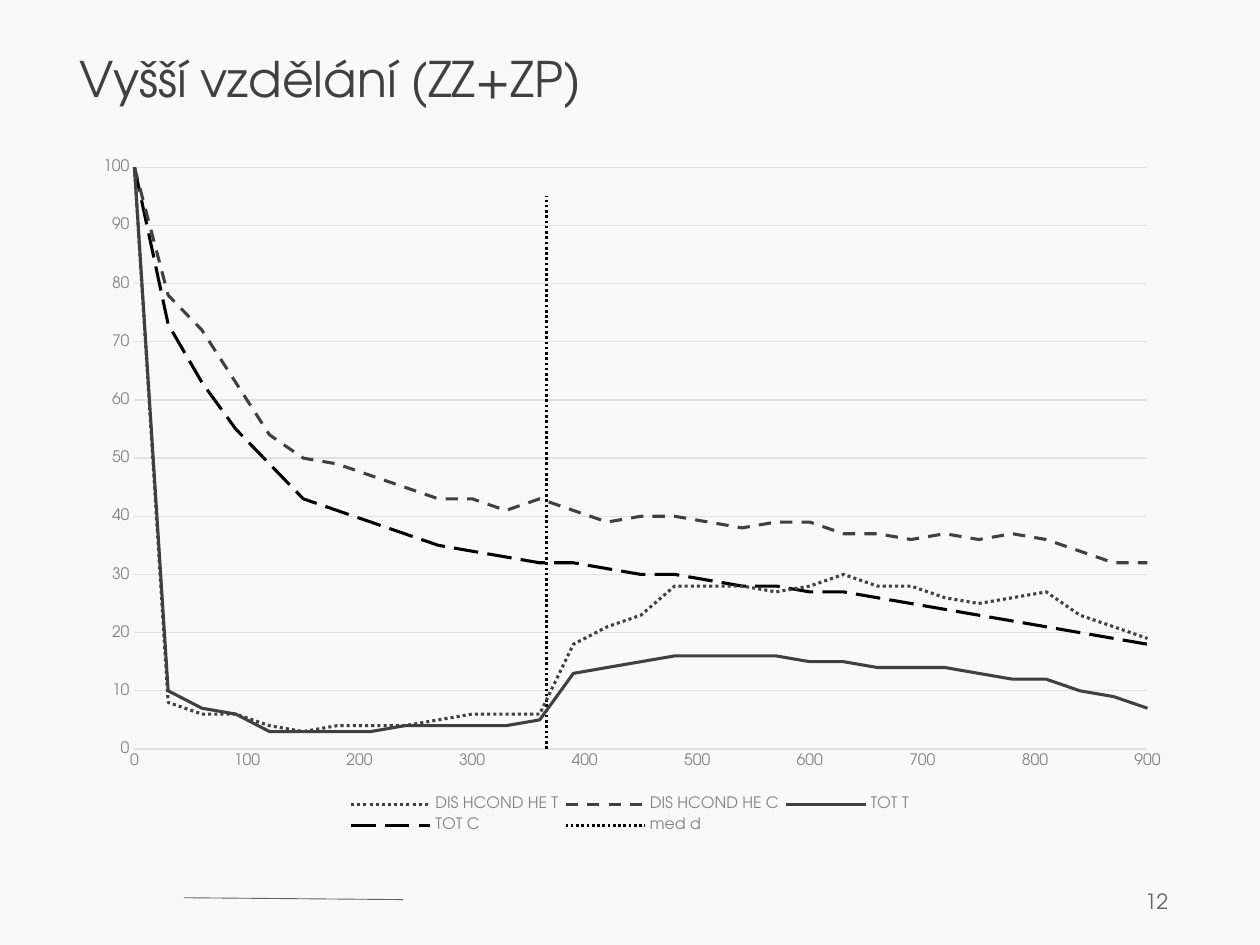
from dataclasses import dataclass
from lxml import etree
from pptx import Presentation
from pptx.chart.data import XyChartData
from pptx.dml.color import RGBColor
from pptx.enum.chart import XL_CHART_TYPE, XL_LEGEND_POSITION, XL_TICK_MARK
from pptx.enum.dml import MSO_LINE
from pptx.enum.shapes import MSO_CONNECTOR
from pptx.enum.text import MSO_ANCHOR, PP_ALIGN
from pptx.oxml.ns import qn
from pptx.util import Inches, Pt

SCATTER = XL_CHART_TYPE.XY_SCATTER_LINES_NO_MARKERS
BOTTOM = XL_LEGEND_POSITION.BOTTOM
NO_TICK = XL_TICK_MARK.NONE
DOT, DASH = MSO_LINE.ROUND_DOT, MSO_LINE.DASH
LONG, SOLID = MSO_LINE.LONG_DASH, MSO_LINE.SOLID
TOP, MIDDLE = MSO_ANCHOR.TOP, MSO_ANCHOR.MIDDLE
LEFT, RIGHT = PP_ALIGN.LEFT, PP_ALIGN.RIGHT
TITLE_ONLY = 5


@dataclass(frozen=True)
class Theme:
    face: str = "TeX Gyre Adventor"
    back: str = "F9F9F9"
    ink: str = "404040"
    black: str = "000000"
    foot: str = "636363"
    label: str = "838383"
    grid: str = "E2E2E2"
    title: int = 28
    number: int = 12
    chart: int = 10
    axis: int = 9


THEME = Theme()
DAYS = range(0, 901, 30)
CURVES = [
    ("DIS HCOND HE T", THEME.ink, 1.75, DOT, DAYS,
     [100, 8, 6, 6, 4, 3, 4, 4, 4, 5, 6, 6, 6, 18, 21, 23, 28, 28, 28, 27,
      28, 30, 28, 28, 26, 25, 26, 27, 23, 21, 19]),
    ("DIS HCOND HE C", THEME.ink, 1.75, DASH, DAYS,
     [100, 78, 72, 63, 54, 50, 49, 47, 45, 43, 43, 41, 43, 41, 39, 40, 40,
      39, 38, 39, 39, 37, 37, 36, 37, 36, 37, 36, 34, 32, 32]),
    ("TOT T", THEME.ink, 1.75, SOLID, DAYS,
     [100, 10, 7, 6, 3, 3, 3, 3, 4, 4, 4, 4, 5, 13, 14, 15, 16, 16, 16, 16,
      15, 15, 14, 14, 14, 13, 12, 12, 10, 9, 7]),
    ("TOT C", THEME.black, 1.75, LONG, DAYS,
     [100, 73, 63, 55, 49, 43, 41, 39, 37, 35, 34, 33, 32, 32, 31, 30, 30,
      29, 28, 28, 27, 27, 26, 25, 24, 23, 22, 21, 20, 19, 18]),
    ("med d", THEME.black, 1.5, DOT, [366, 366], [0, 95]),
]


class Deck:
    def __init__(self, theme):
        self.theme = theme
        self.show = Presentation()
        self.show.slide_width, self.show.slide_height = Inches(10), Inches(7.5)
        self.slide = self.show.slides.add_slide(
            self.show.slide_layouts[TITLE_ONLY])
        fill = self.slide.background.fill
        fill.solid()
        fill.fore_color.rgb = RGBColor.from_string(theme.back)

    def scale(self, *shares):
        sides = self.show.slide_width, self.show.slide_height
        return [round(s * sides[i % 2] / 100) for i, s in enumerate(shares)]

    def font(self, font, size, color):
        font.name, font.size = self.theme.face, Pt(size)
        font.color.rgb = RGBColor.from_string(color)

    def stroke(self, line, color, width, dash=SOLID):
        line.color.rgb = RGBColor.from_string(color)
        line.width, line.dash_style = Pt(width), dash

    def label(self, shape, text, size, color, align, anchor):
        frame = shape.text_frame
        frame.word_wrap, frame.vertical_anchor = True, anchor
        para = frame.paragraphs[0]
        para.text, para.alignment = text, align
        self.font(para.font, size, color)
        return frame

    def title(self, text, *box):
        shape = self.slide.shapes.title
        shape.left, shape.top, shape.width, shape.height = self.scale(*box)
        frame = self.label(shape, text, self.theme.title, self.theme.ink,
                           LEFT, TOP)
        frame.margin_left = frame.margin_right = 0
        frame.margin_top = frame.margin_bottom = 0
        frame.paragraphs[0].line_spacing = 0.8

    def number(self, text, *box):
        shape = self.slide.shapes.add_textbox(*self.scale(*box))
        self.label(shape, text, self.theme.number, self.theme.foot,
                   RIGHT, MIDDLE)

    def rule(self, *ends):
        line = self.slide.shapes.add_connector(
            MSO_CONNECTOR.STRAIGHT, *self.scale(*ends))
        self.stroke(line.line, self.theme.foot, 0.5)
        etree.SubElement(line._element.spPr, qn("a:effectLst"))

    def place(self, part, index, inner, *box):
        for old in part.findall(qn("c:layout")):
            part.remove(old)
        layout = etree.Element(qn("c:layout"))
        manual = etree.SubElement(layout, qn("c:manualLayout"))
        pairs = [("layoutTarget", "inner")] if inner else []
        pairs += [("xMode", "edge"), ("yMode", "edge"), *zip("xywh", box)]
        for tag, val in pairs:
            etree.SubElement(manual, qn("c:" + tag), val=str(val))
        part.insert(index, layout)

    def axis(self, axis, top, step):
        axis.minimum_scale, axis.maximum_scale = 0, top
        axis.major_unit = step
        axis.major_tick_mark = axis.minor_tick_mark = NO_TICK
        axis.has_major_gridlines = False
        axis.tick_labels.number_format = "0"
        axis.tick_labels.number_format_is_linked = False
        self.font(axis.tick_labels.font, self.theme.axis, self.theme.label)

    def chart(self, curves, *box):
        theme, data = self.theme, XyChartData()
        for name, _, _, _, days, shares in curves:
            series = data.add_series(name)
            for point in zip(days, shares):
                series.add_data_point(*point)
        chart = self.slide.shapes.add_chart(
            SCATTER, *self.scale(*box), data).chart
        self.font(chart.font, theme.chart, theme.ink)
        chart.has_title = False
        plot = chart.plots[0]
        plot.vary_by_categories = False
        for series, (_, color, width, dash, _, _) in zip(plot.series, curves):
            series.smooth = False
            self.stroke(series.format.line, color, width, dash)
        across, up = chart.category_axis, chart.value_axis
        self.axis(across, 900, 100)
        self.axis(up, 100, 10)
        self.stroke(across.format.line, theme.grid, 0.75)
        up.format.line.fill.background()
        up.has_major_gridlines = True
        self.stroke(up.major_gridlines.format.line, theme.grid, 0.75)
        chart.has_legend = True
        legend = chart.legend
        legend.position, legend.include_in_layout = BOTTOM, False
        self.font(legend.font, theme.axis, theme.label)
        area = chart._chartSpace.chart.plotArea
        self.place(area, 0, True, 0.05, 0.03, 0.92, 0.84)
        self.place(legend._element, 1, False, 0.24, 0.93, 0.52, 0.07)

    def save(self):
        self.show.save("out.pptx")


def main():
    deck = Deck(THEME)
    edge, wide = 6.3, 87.4
    deck.rule(14.6, 95, 32, 95.2)
    deck.number("12", 71.2, 92.7, 22.5, 5.3)
    deck.title("Vyšší vzdělání (ZZ+ZP)", edge, 6.3, wide, 5.3)
    deck.chart(CURVES, edge, 15.5, wide, 73.3)
    deck.save()


if __name__ == "__main__":
    main()
